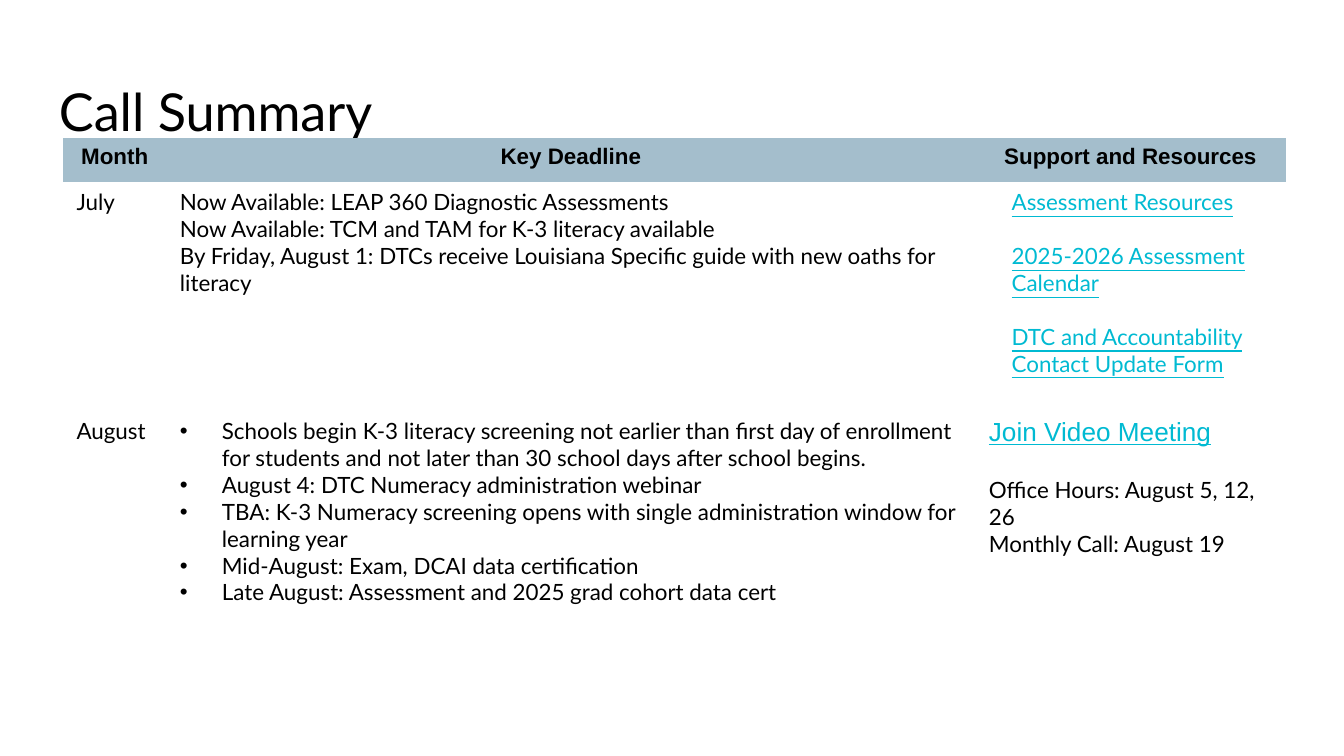
from dataclasses import dataclass

from lxml.etree import SubElement
from pptx import Presentation
from pptx.dml.color import RGBColor
from pptx.enum.text import MSO_ANCHOR, PP_ALIGN
from pptx.oxml.ns import qn
from pptx.util import Pt


@dataclass(frozen=True)
class Theme:
    ink: str = "000000"
    link: str = "00BAD2"
    header: str = "A4BECC"
    body_font: str = "Lato"
    header_font: str = "Arial"
    title_size: int = 28
    link_size: int = 14
    body_size: int = 12


THEME = Theme()
PLAIN_TABLE_STYLE = "{2D5ABB26-0587-4C30-8999-92F81FD0307C}"

HEADER = dict(font=THEME.header_font, bold=True, align=PP_ALIGN.CENTER)
LINK = dict(color=THEME.link, underline=True, indent=12.2, gap=14.4)
MEETING_LINK = dict(color=THEME.link, underline=True,
                    font=THEME.header_font, size=THEME.link_size)
BULLET = dict(bullet="•", indent=22.5)

TITLE = "Call Summary"
TITLE_BOX = (24.5, 35.3, 671, 45.4)
TABLE_LEFT, TABLE_TOP = 33.8, 73.7
COLUMN_WIDTHS = (55.4, 433.4, 166.2)
ROW_HEIGHTS = (23.8, 122.6, 136.6)

ROWS = [
    [
        [(["Month"], HEADER)],
        [(["Key Deadline"], HEADER)],
        [(["Support and Resources"], HEADER)],
    ],
    [
        [(["July"], {})],
        [([
            "Now Available: LEAP 360 Diagnostic Assessments",
            "Now Available: TCM and TAM for K-3 literacy available",
            "By Friday, August 1: DTCs receive Louisiana Specific guide with new oaths for literacy",
        ], {})],
        [([
            "Assessment Resources",
            "2025-2026 Assessment Calendar",
            "DTC and Accountability Contact Update Form",
        ], LINK)],
    ],
    [
        [(["August"], {})],
        [([
            "Schools begin K-3 literacy screening not earlier than first day of enrollment "
            "for students and not later than 30 school days after school begins.",
            "August 4: DTC Numeracy administration webinar",
            "TBA: K-3 Numeracy screening opens with single administration window for learning year",
            "Mid-August: Exam, DCAI data certification",
            "Late August: Assessment and 2025 grad cohort data cert",
        ], BULLET)],
        [
            (["Join Video Meeting"], MEETING_LINK),
            (["Office Hours: August 5, 12, 26"], dict(gap=16)),
            (["Monthly Call: August 19"], {}),
        ],
    ],
]


def add_text(frame, text, font=THEME.body_font, size=THEME.body_size, color=THEME.ink,
             bold=False, underline=False, align=PP_ALIGN.LEFT, indent=0, bullet=None, gap=0):
    first = not frame.paragraphs[0].runs
    paragraph = frame.paragraphs[0] if first else frame.add_paragraph()
    paragraph.alignment = align
    paragraph.space_before = Pt(0 if first else gap)
    properties = paragraph._p.get_or_add_pPr()
    properties.set("marL", str(Pt(indent)))
    properties.set("indent", str(Pt(-indent if bullet else 0)))
    if bullet:
        SubElement(properties, qn("a:buFont")).set("typeface", "Arial")
        SubElement(properties, qn("a:buChar")).set("char", bullet)
    run = paragraph.add_run()
    run.text = text
    run.font.name = font
    run.font.size = Pt(size)
    run.font.bold = bold
    run.font.underline = underline
    run.font.color.rgb = RGBColor.from_string(color)


def add_title(slide):
    frame = slide.shapes.add_textbox(*map(Pt, TITLE_BOX)).text_frame
    frame.word_wrap = True
    frame.vertical_anchor = MSO_ANCHOR.TOP
    frame.margin_left = frame.margin_right = Pt(7.2)
    frame.margin_top = frame.margin_bottom = Pt(7.2)
    add_text(frame, TITLE, size=THEME.title_size)


def add_summary_table(slide):
    table = slide.shapes.add_table(
        len(ROWS), len(COLUMN_WIDTHS), Pt(TABLE_LEFT), Pt(TABLE_TOP),
        Pt(sum(COLUMN_WIDTHS)), Pt(sum(ROW_HEIGHTS))).table
    table.horz_banding = False
    table._tbl.tblPr.find(qn("a:tableStyleId")).text = PLAIN_TABLE_STYLE
    for column, width in zip(table.columns, COLUMN_WIDTHS):
        column.width = Pt(width)
    for row_index, (row, height) in enumerate(zip(table.rows, ROW_HEIGHTS)):
        row.height = Pt(height)
        for cell, groups in zip(row.cells, ROWS[row_index]):
            if row_index == 0:
                cell.fill.solid()
                cell.fill.fore_color.rgb = RGBColor.from_string(THEME.header)
            else:
                cell.fill.background()
            for lines, style in groups:
                for line in lines:
                    add_text(cell.text_frame, line, **style)


def main():
    presentation = Presentation()
    presentation.slide_width, presentation.slide_height = Pt(720), Pt(405)
    slide = presentation.slides.add_slide(presentation.slide_layouts[6])
    add_title(slide)
    add_summary_table(slide)
    presentation.save("out.pptx")


if __name__ == "__main__":
    main()
